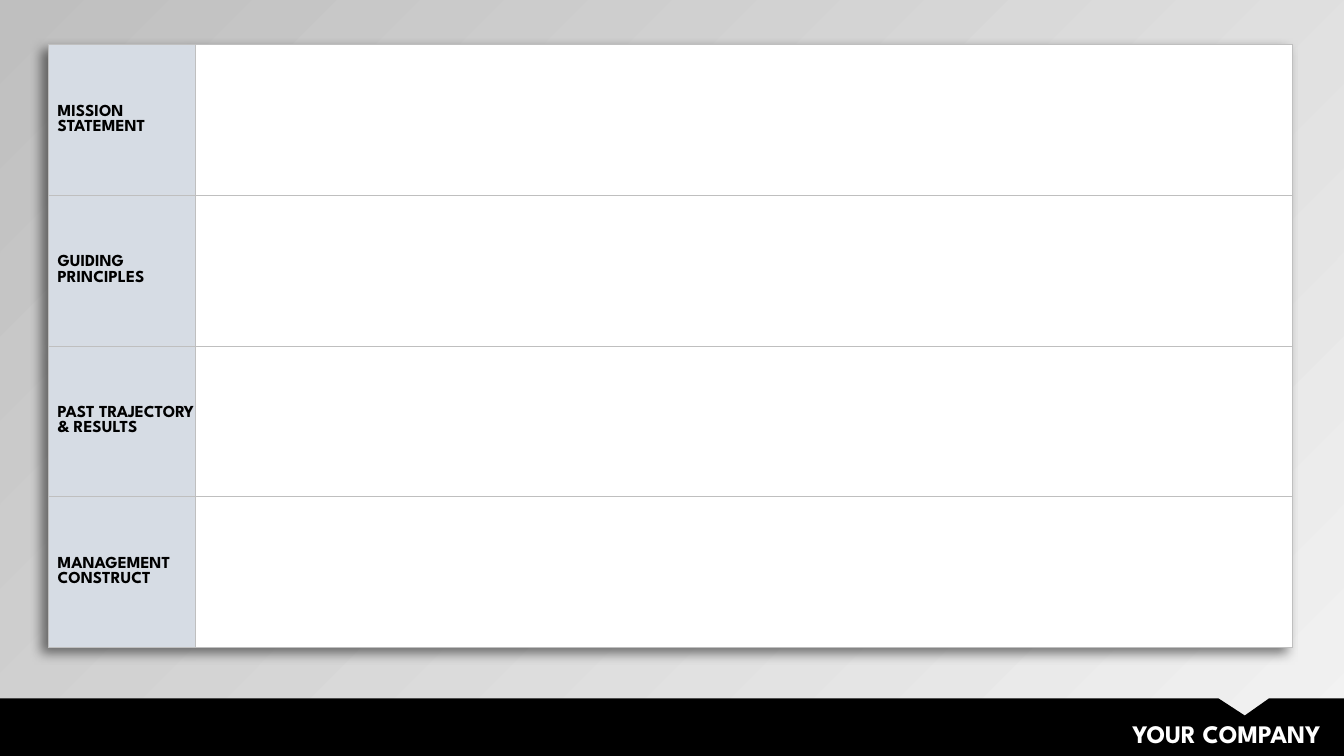
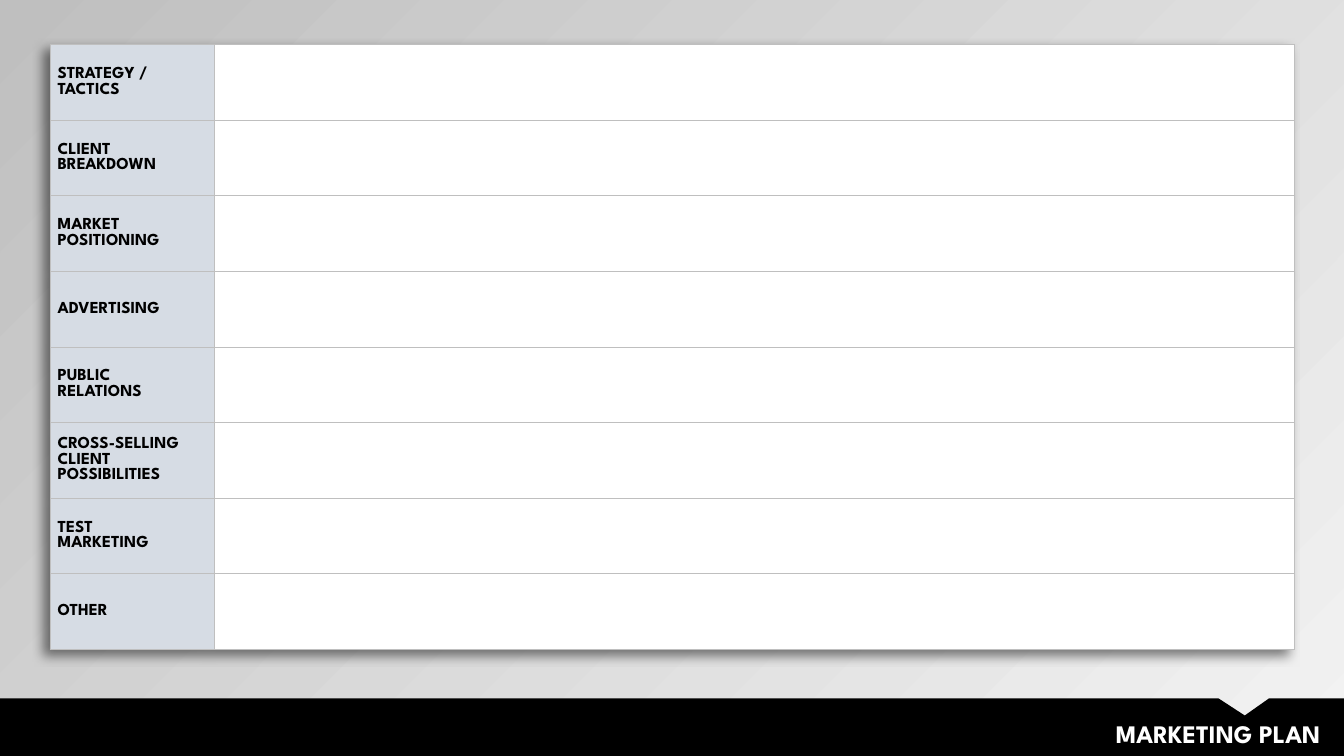
from dataclasses import dataclass

from lxml import etree
from pptx import Presentation
from pptx.dml.color import RGBColor
from pptx.enum.text import MSO_ANCHOR, MSO_AUTO_SIZE, PP_ALIGN
from pptx.oxml.ns import qn
from pptx.slide import Slide
from pptx.table import Table, _Cell
from pptx.text.text import _Paragraph
from pptx.util import Cm, Pt

FONT = "League Spartan"
COLORS = {
    "black": "000000",
    "white": "FFFFFF",
    "label": "D6DCE4",
    "border": "BFBFBF",
    "light": "F2F2F2",
    "dark": "BFBFBF",
}

PAGE_WIDTH, PAGE_HEIGHT = 33.87, 19.05
BAND_TOP = 17.6
BAND_OUTLINE = [
    (0, BAND_TOP), (30.71, BAND_TOP), (31.37, 18.03), (31.98, BAND_TOP),
    (PAGE_WIDTH, BAND_TOP), (PAGE_WIDTH, PAGE_HEIGHT), (0, PAGE_HEIGHT),
]
TABLE_TOP, TABLE_WIDTH = 1.12, 31.34


@dataclass(frozen=True)
class PlanPage:
    """One page: a title in the band and a table of labelled rows, in cm."""
    title: str
    labels: tuple[str, ...]
    left: float
    height: float
    label_width: float
    left_inset: float
    right_inset: float


PAGES = [
    PlanPage(
        "YOUR COMPANY",
        ("MISSION STATEMENT", "GUIDING PRINCIPLES",
         "PAST TRAJECTORY\n& RESULTS", "MANAGEMENT CONSTRUCT"),
        left=1.22, height=15.19, label_width=3.71,
        left_inset=0.23, right_inset=0.03,
    ),
    PlanPage(
        "MARKETING PLAN",
        ("STRATEGY / TACTICS", "CLIENT BREAKDOWN", "MARKET POSITIONING",
         "ADVERTISING", "PUBLIC\nRELATIONS",
         "CROSS-SELLING CLIENT POSSIBILITIES", "TEST\nMARKETING", "OTHER"),
        left=1.27, height=15.24, label_width=4.14,
        left_inset=0.18, right_inset=0.18,
    ),
]


def color(name: str) -> RGBColor:
    return RGBColor.from_string(COLORS[name])


def style_paragraph(para: _Paragraph, size: int, color_name: str) -> None:
    para.font.name = FONT
    para.font.size = Pt(size)
    para.font.bold = True
    para.font.color.rgb = color(color_name)


def add_background(page: Slide) -> None:
    fill = page.background.fill
    fill.gradient()
    fill.gradient_angle = 135
    for stop, name in zip(fill.gradient_stops, ("light", "dark")):
        stop.color.rgb = color(name)


def add_band(page: Slide, title: str) -> None:
    # Black band with a notch
    start, *corners = [(Cm(x), Cm(y)) for x, y in BAND_OUTLINE]
    builder = page.shapes.build_freeform(*start)
    builder.add_line_segments(corners, close=True)
    band = builder.convert_to_shape()
    band.shadow.inherit = False
    band.fill.solid()
    band.fill.fore_color.rgb = color("black")
    band.line.fill.background()

    # Title in the band
    box = page.shapes.add_textbox(Cm(10.52), Cm(17.98), Cm(23.01), Cm(1.02))
    box.text_frame.word_wrap = True
    box.text_frame.auto_size = MSO_AUTO_SIZE.SHAPE_TO_FIT_TEXT
    para = box.text_frame.paragraphs[0]
    para.text = title
    para.alignment = PP_ALIGN.RIGHT
    style_paragraph(para, 18, "white")


def add_color_element(parent: etree._Element, name: str) -> etree._Element:
    return etree.SubElement(parent, qn("a:srgbClr"), val=COLORS[name])


def style_cell(cell: _Cell, fill_name: str) -> None:
    # Borders come before the fill in the cell properties
    properties = cell._tc.get_or_add_tcPr()
    for side in ("a:lnL", "a:lnR", "a:lnT", "a:lnB"):
        line = etree.SubElement(properties, qn(side), w=str(Pt(0.5)))
        add_color_element(etree.SubElement(line, qn("a:solidFill")), "border")
    cell.fill.solid()
    cell.fill.fore_color.rgb = color(fill_name)


def add_table_shadow(table: Table) -> None:
    effects = etree.Element(qn("a:effectLst"))
    shadow = etree.SubElement(
        effects, qn("a:outerShdw"), blurRad=str(Pt(8)), dist=str(Pt(6)),
        dir=str(135 * 60000), algn="tr", rotWithShape="0")
    shadow_color = add_color_element(shadow, "black")
    etree.SubElement(shadow_color, qn("a:alpha"), val="50000")
    table._tbl.tblPr.insert(0, effects)


def add_plan_table(page: Slide, plan: PlanPage) -> None:
    row_count = len(plan.labels)
    table = page.shapes.add_table(
        row_count, 2, Cm(plan.left), Cm(TABLE_TOP),
        Cm(TABLE_WIDTH), Cm(plan.height)).table
    table.first_row = False
    table.horz_banding = False
    table.columns[0].width = Cm(plan.label_width)
    table.columns[1].width = Cm(TABLE_WIDTH - plan.label_width)
    add_table_shadow(table)

    for row, label in zip(table.rows, plan.labels):
        row.height = Cm(plan.height / row_count)
        label_cell, content_cell = row.cells
        style_cell(label_cell, "label")
        style_cell(content_cell, "white")
        label_cell.vertical_anchor = MSO_ANCHOR.MIDDLE
        label_cell.margin_left = Cm(plan.left_inset)
        label_cell.margin_right = Cm(plan.right_inset)
        label_cell.margin_top = label_cell.margin_bottom = Cm(0)
        label_cell.text = label
        for para in label_cell.text_frame.paragraphs:
            style_paragraph(para, 12, "black")


def main() -> None:
    deck = Presentation()
    deck.slide_width, deck.slide_height = Cm(PAGE_WIDTH), Cm(PAGE_HEIGHT)
    for plan in PAGES:
        page = deck.slides.add_slide(deck.slide_layouts[6])
        add_background(page)
        add_plan_table(page, plan)
        add_band(page, plan.title)
    deck.save("out.pptx")


if __name__ == "__main__":
    main()
